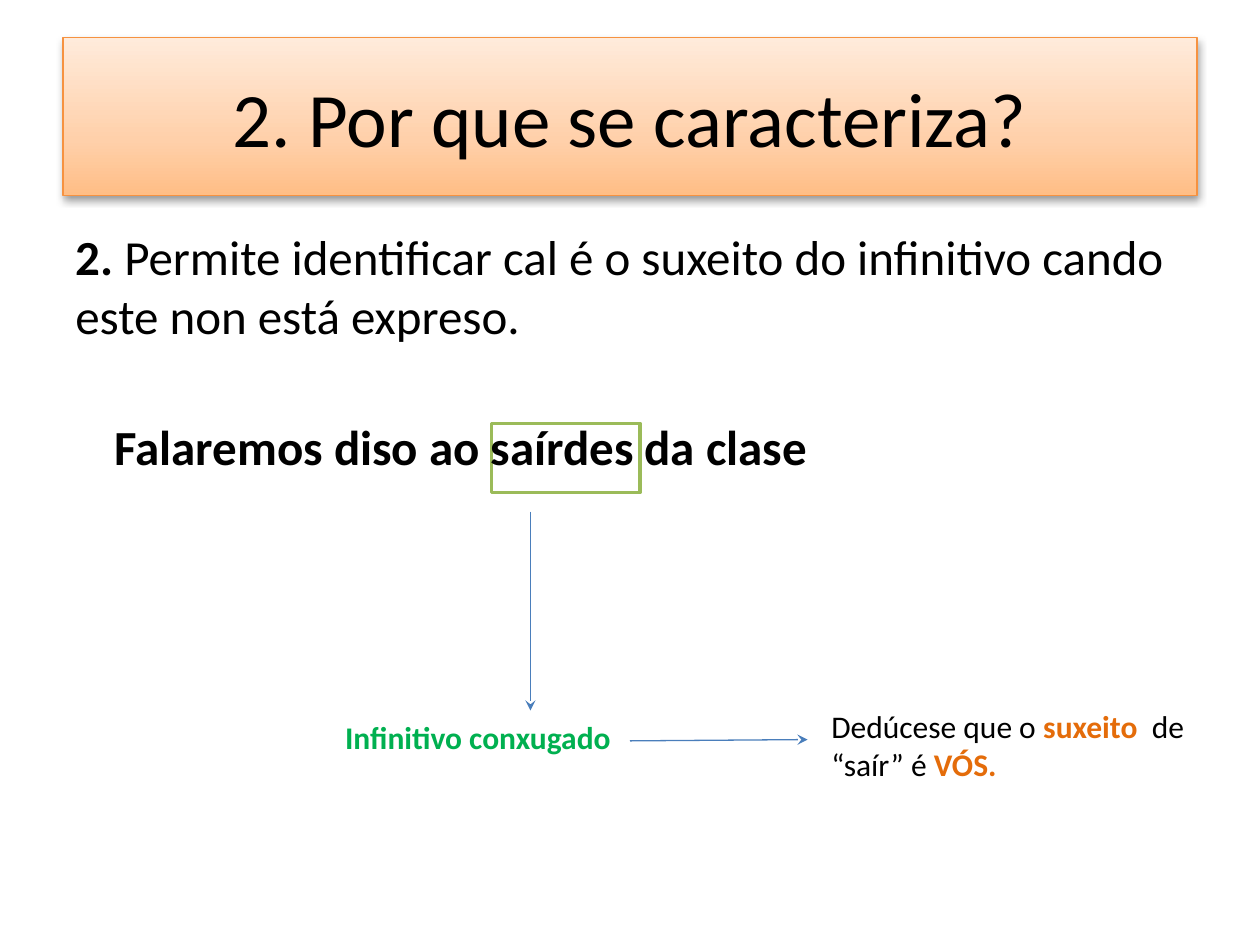
import copy
from dataclasses import dataclass

import pptx
import pptx.dml.color
import pptx.enum.shapes
import pptx.enum.text
import pptx.oxml
import pptx.oxml.ns
import pptx.util

COLUMNS, ROWS = 100, 75
CELL = pptx.util.Inches(0.1)


@dataclass(frozen=True)
class Theme:
    font: str = "Calibri"
    title_size: int = 44
    body_size: int = 28
    label_size: int = 18
    text: str = "000000"
    background: str = "FFFFFF"
    subject: str = "E46C0A"
    infinitive: str = "00B050"
    frame: str = "9BBB59"
    arrow: str = "4A7EBB"
    banner_line: str = "F69240"
    banner_stops: tuple = ((0, "FFBE86"), (0.35, "FFD0AA"), (1, "FFEBDB"))


THEME = Theme()


def grid(*cells):
    return [round(cell * CELL) for cell in cells]


def rgb(value):
    return pptx.dml.color.RGBColor.from_string(value)


def add_effects(shape, content=""):
    namespace = pptx.oxml.ns.nsdecls("a")
    effects = pptx.oxml.parse_xml(f"<a:effectLst {namespace}>{content}</a:effectLst>")
    shape._element.spPr.append(effects)


def set_line(line, color, width):
    line.color.rgb = rgb(color)
    line.width = pptx.util.Pt(width)


def write(shape, size, runs, centred=False):
    """Fill a shape with one paragraph; each run is (text, bold, color)."""
    frame = shape.text_frame
    frame.word_wrap = True
    if centred:
        frame.vertical_anchor = pptx.enum.text.MSO_ANCHOR.MIDDLE
    paragraph = frame.paragraphs[0]
    paragraph.alignment = (pptx.enum.text.PP_ALIGN.CENTER if centred
                           else pptx.enum.text.PP_ALIGN.LEFT)
    paragraph.font.name = THEME.font
    paragraph.font.size = pptx.util.Pt(size)
    for text, bold, color in runs:
        run = paragraph.add_run()
        run.text = text
        run.font.bold = bold
        run.font.color.rgb = rgb(color)


def add_text(slide, place, size, runs):
    write(slide.shapes.add_textbox(*grid(*place)), size, runs)


def add_rectangle(slide, place, line_color, line_width):
    kind = pptx.enum.shapes.MSO_SHAPE.RECTANGLE
    shape = slide.shapes.add_shape(kind, *grid(*place))
    set_line(shape.line, line_color, line_width)
    return shape


def fill_gradient(fill, stops):
    """Run the stops from the bottom edge to the top edge."""
    fill.gradient()
    fill.gradient_angle = 90
    first = fill.gradient_stops[0]._gs
    for _ in stops[2:]:
        first.addnext(copy.deepcopy(first))
    for stop, (position, color) in zip(fill.gradient_stops, stops):
        stop.position = position
        stop.color.rgb = rgb(color)


def add_banner(slide, place, text):
    banner = add_rectangle(slide, place, THEME.banner_line, 0.75)
    fill_gradient(banner.fill, THEME.banner_stops)
    blur, distance = pptx.util.Pt(5), pptx.util.Pt(1.6)
    add_effects(banner, (
        f'<a:outerShdw blurRad="{blur}" dist="{distance}" dir="5400000" rotWithShape="0">'
        f'<a:srgbClr val="{THEME.text}"><a:alpha val="38000"/></a:srgbClr></a:outerShdw>'))
    write(banner, THEME.title_size, [(text, False, THEME.text)], centred=True)


def add_frame(slide, place):
    frame = add_rectangle(slide, place, THEME.frame, 2)
    frame.shadow.inherit = False
    frame.fill.solid()
    frame.fill.fore_color.rgb = rgb(THEME.background)


def add_arrow(slide, start, end):
    kind = pptx.enum.shapes.MSO_CONNECTOR.STRAIGHT
    arrow = slide.shapes.add_connector(kind, *grid(*start, *end))
    set_line(arrow.line, THEME.arrow, 0.75)
    namespace = pptx.oxml.ns.nsdecls("a")
    head = pptx.oxml.parse_xml(f'<a:tailEnd {namespace} type="stealth"/>')
    arrow.line._get_or_add_ln().append(head)
    add_effects(arrow)


def main():
    presentation = pptx.Presentation()
    presentation.slide_width, presentation.slide_height = grid(COLUMNS, ROWS)
    slide = presentation.slides.add_slide(presentation.slide_layouts[6])

    add_banner(slide, (5, 3, 90, 12.5), "2. Por que se caracteriza?")
    add_text(slide, (5, 17.5, 92.3, 9.8), THEME.body_size, [
        ("2. ", True, THEME.text),
        ("Permite identificar cal é o suxeito do infinitivo cando este non está expreso.",
         False, THEME.text),
    ])
    add_frame(slide, (39, 33.6, 11.8, 5.5))
    add_text(slide, (8.1, 32.6, 74.2, 7.2), THEME.body_size,
             [("Falaremos diso ao saírdes da clase", True, THEME.text)])
    add_text(slide, (26.4, 56.5, 26, 4), THEME.label_size,
             [("Infinitivo conxugado", True, THEME.infinitive)])
    add_arrow(slide, (42.1, 40.6), (42.1, 56.4))
    add_arrow(slide, (50, 58.8), (64.1, 58.7))
    add_text(slide, (65, 55.6, 32.3, 7.1), THEME.label_size, [
        ("Dedúcese que o ", False, THEME.text),
        ("suxeito  ", True, THEME.subject),
        ("de “saír” é ", False, THEME.text),
        ("VÓS.", True, THEME.subject),
    ])
    presentation.save("out.pptx")


if __name__ == "__main__":
    main()
